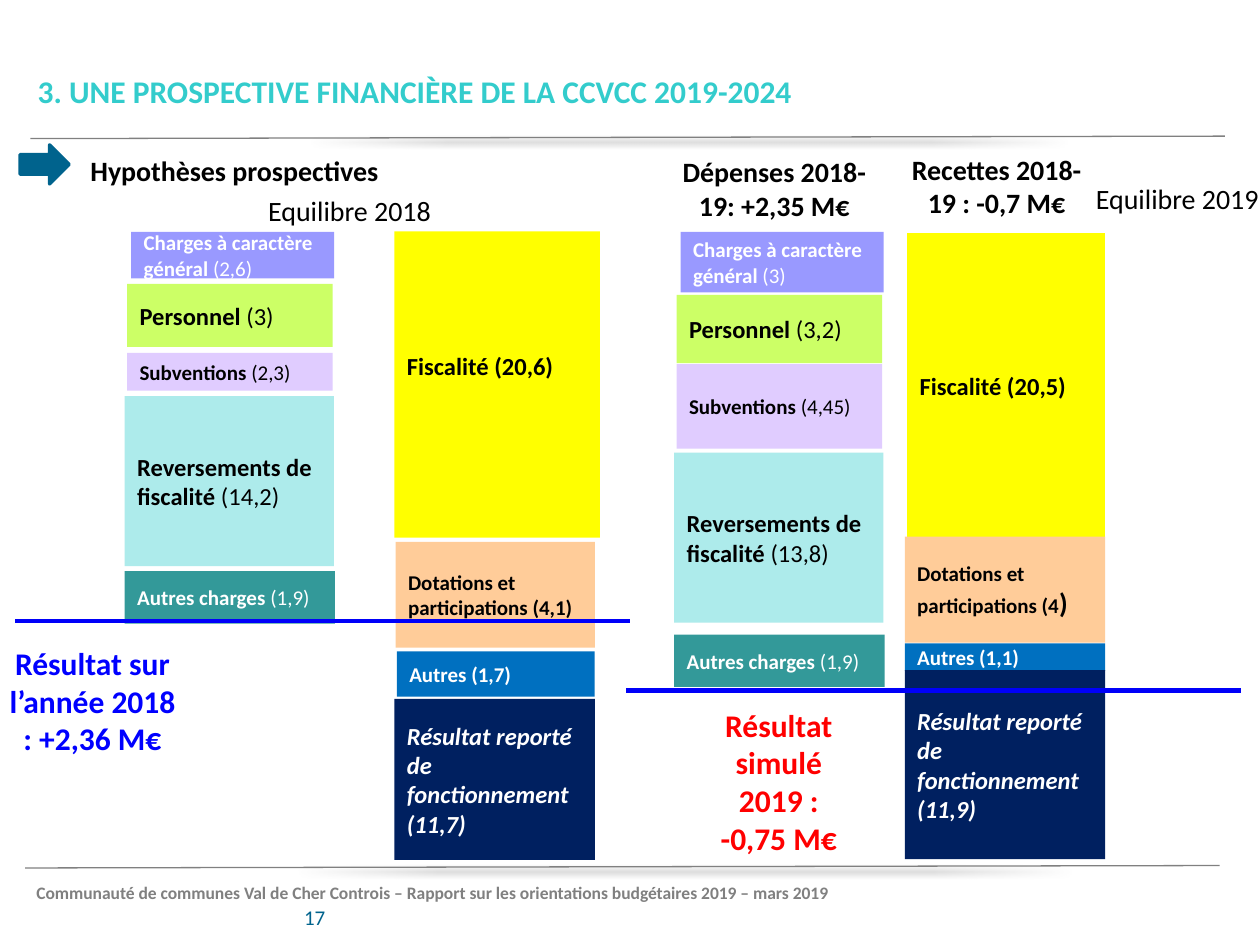
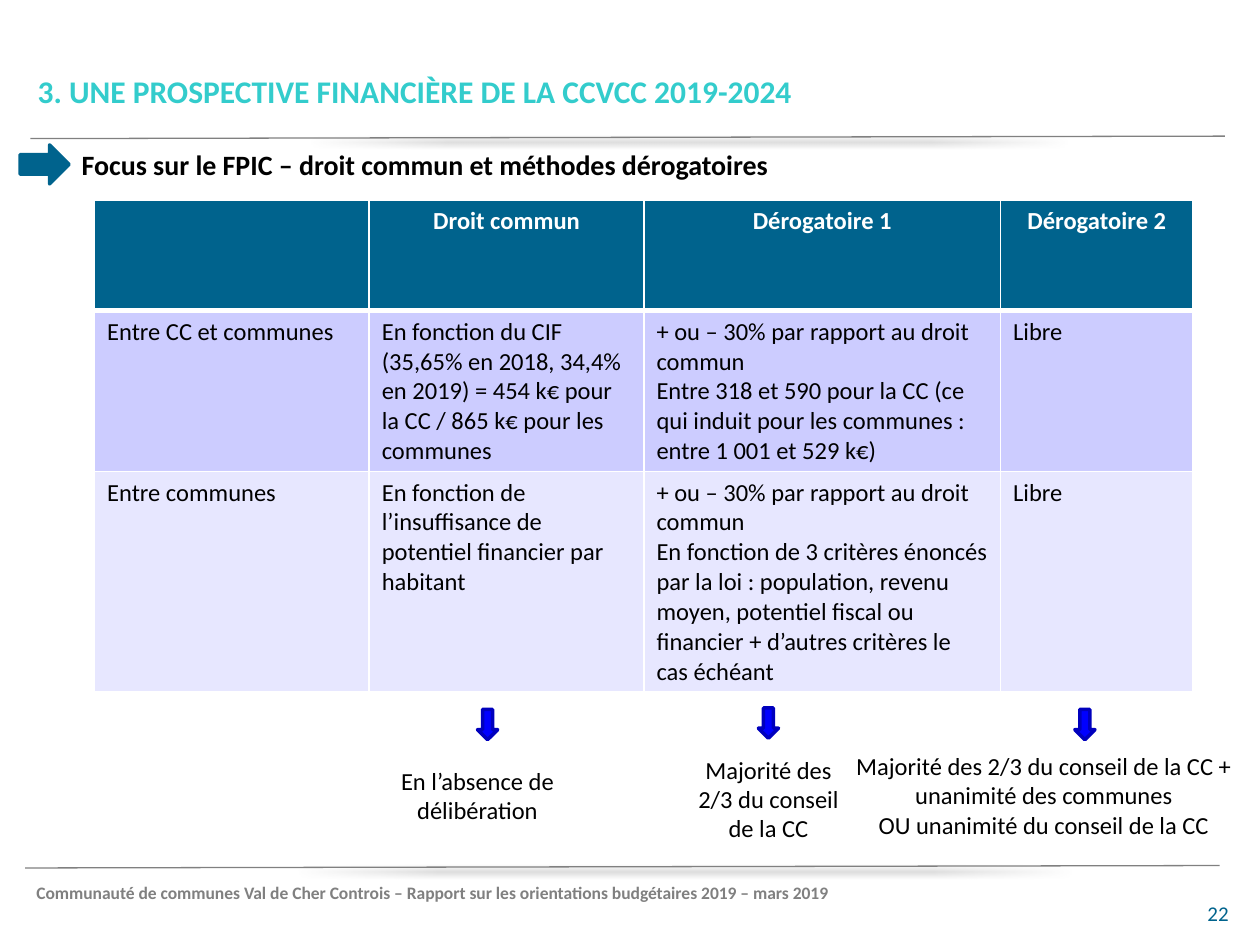
from dataclasses import dataclass

from lxml import etree
from pptx import Presentation
from pptx.dml import color
from pptx.enum import shapes, text
from pptx.oxml import ns
from pptx.util import Pt


@dataclass(frozen=True)
class Theme:
    font: str = "Calibri"
    black: str = "000000"
    white: str = "FFFFFF"
    grey: str = "808080"
    turquoise: str = "33CCCC"
    petrol: str = "00638D"
    blue: str = "0000FF"
    line_blue: str = "0000F9"
    dark_blue: str = "0000BD"
    red: str = "FF0000"
    lavender: str = "CCCCFF"
    pale_lavender: str = "E7E7FF"
    footer: int = 10
    small: int = 12
    body: int = 14
    heading: int = 16
    title: int = 18


THEME = Theme()
LEFT, CENTER, RIGHT = text.PP_ALIGN.LEFT, text.PP_ALIGN.CENTER, text.PP_ALIGN.RIGHT
MIDDLE = text.MSO_ANCHOR.MIDDLE


@dataclass(frozen=True)
class Area:
    left: float
    top: float
    width: float
    height: float

    def lengths(self):
        return Pt(self.left), Pt(self.top), Pt(self.width), Pt(self.height)


@dataclass(frozen=True)
class Style:
    size: int = THEME.body
    colour: str = THEME.black
    bold: bool = False
    italic: bool = False
    align: text.PP_ALIGN = LEFT


@dataclass(frozen=True)
class Category:
    label: str
    fill: str
    style: Style
    bold_value: bool = False


@dataclass(frozen=True)
class Block:
    category: Category
    value: str
    area: Area
    lift: float = 0
    ending: str = ""


@dataclass(frozen=True)
class Caption:
    content: str
    area: Area
    style: Style


@dataclass(frozen=True)
class Option:
    arrow_left: float
    arrow_top: float
    caption: str
    area: Area


HEADING = Style(THEME.heading, bold=True)
CENTRED_HEADING = Style(THEME.heading, bold=True, align=CENTER)
PLAIN_HEADING = Style(THEME.heading)
SMALL_BOLD = Style(THEME.small, bold=True)
SMALL_WHITE = Style(THEME.small, THEME.white, True)
BODY_BOLD = Style(bold=True)

GENERAL = Category("Charges à caractère général ", "9999FF", SMALL_WHITE)
STAFF = Category("Personnel ", "CCFF66", BODY_BOLD)
GRANTS = Category("Subventions ", "E0CCFF", SMALL_BOLD)
TRANSFERS = Category("Reversements de fiscalité ", "ADEBEB", BODY_BOLD)
OTHER_COSTS = Category("Autres charges ", "339999", SMALL_WHITE)
TAXES = Category("Fiscalité ", "FFFF00", BODY_BOLD, True)
ALLOCATIONS = Category("Dotations et participations ", "FFCC99", SMALL_BOLD, True)
OTHER_INCOME = Category("Autres ", "0070C0", SMALL_WHITE, True)
CARRIED = Category("Résultat reporté de fonctionnement ", "002060",
                   Style(colour=THEME.white, bold=True, italic=True), True)

EXPENSE_COLUMNS = {GENERAL: (75, 116), STAFF: (72.7, 117.4), GRANTS: (72.7, 117.4),
                   TRANSFERS: (71.3, 119.5), OTHER_COSTS: (71.3, 120.2)}
EXPENSE_YEARS = (
    (0, (("(2,6)", 132.5, 26.6), ("(3)", 162.3, 36), ("(2,3)", 201.6, 21.6),
         ("(14,2)", 226.3, 97.2), ("(1,9)", 326.4, 30))),
    (314, (("(3)", 132.5, 34.6), ("(3,2)", 168.5, 39), ("(4,45)", 208, 48.4),
           ("(13,8)", 258.6, 97.2), ("(1,9)", 362.6, 30))),
)
INCOME = (
    Block(TAXES, "(20,6)", Area(225.4, 132.3, 117.4, 175), lift=22),
    Block(ALLOCATIONS, "(4,1)", Area(226.1, 309.6, 113.8, 60.5)),
    Block(OTHER_INCOME, "(1,7)", Area(226.8, 372.2, 113, 25.9)),
    Block(CARRIED, "(11,7)", Area(225.4, 399.4, 114.5, 92)),
    Block(TAXES, "(20,5)", Area(518.4, 133.2, 113, 174.2)),
    Block(ALLOCATIONS, "(4", Area(517, 306.7, 114.5, 60.5), ending=")"),
    Block(OTHER_INCOME, "(1,1)", Area(517, 367.6, 114.5, 15.8)),
    Block(CARRIED, "(11,9)", Area(517, 383, 114.5, 108)),
)
CAPTIONS = (
    Caption("Equilibre 2018", Area(146.2, 107.3, 111, 26.6), PLAIN_HEADING),
    Caption("Equilibre 2019", Area(619.2, 100, 111, 26.6), PLAIN_HEADING),
    Caption("Dépenses 2018-19: +2,35 M€", Area(373.7, 85, 137.5, 46), CENTRED_HEADING),
    Caption("Recettes 2018-19 : -0,7 M€", Area(508.3, 83.5, 122.4, 46), CENTRED_HEADING),
    Caption("Résultat sur l’année 2018 : +2,36 M€", Area(-3.6, 364.3, 113, 72.7),
            Style(THEME.title, THEME.blue, True, align=CENTER)),
    Caption("Résultat simulé 2019 :\n-0,75 M€", Area(398.9, 399.6, 92.2, 94.3),
            Style(THEME.title, THEME.red, True, align=CENTER)),
)
TABLE_AREA = Area(54, 114.5, 627.8, 281)
TABLE_COLUMNS = (157, 157, 203.8, 110)
TABLE_HEIGHTS = (63, 92, 126)
TABLE_FILLS = (THEME.petrol, THEME.lavender, THEME.pale_lavender)
TABLE_ROWS = (
    ("", "Droit commun", "Dérogatoire 1", "Dérogatoire 2"),
    ("Entre CC et communes",
     "En fonction du CIF (35,65% en 2018, 34,4% en 2019) = 454 k€ pour la CC / 865 k€ pour les communes",
     "+ ou – 30% par rapport au droit commun\nEntre 318 et 590 pour la CC (ce qui induit pour les communes : entre 1 001 et 529 k€)",
     "Libre"),
    ("Entre communes",
     "En fonction de l’insuffisance de potentiel financier par habitant",
     "+ ou – 30% par rapport au droit commun\nEn fonction de 3 critères énoncés par la loi : population, revenu moyen, potentiel fiscal ou financier + d’autres critères le cas échéant",
     "Libre"),
)
OPTIONS = (
    Option(272.9, 405.4, "En l’absence de délibération", Area(218.9, 434.2, 108, 41)),
    Option(433.4, 404.6, "Majorité des 2/3 du conseil de la CC", Area(385.2, 427.7, 108, 58.3)),
    Option(614.2, 405.4,
           "Majorité des 2/3 du conseil de la CC + unanimité des communes\nOU unanimité du conseil de la CC",
           Area(461.5, 425.5, 270, 58.3)),
)


def rgb(value: str) -> color.RGBColor:
    return color.RGBColor.from_string(value)


def format_span(span, style: Style) -> None:
    font = span.font
    font.name, font.size = THEME.font, Pt(style.size)
    font.bold, font.italic = style.bold, style.italic
    font.color.rgb = rgb(style.colour)


def write(frame, content: str, style: Style) -> None:
    frame.text = content
    frame.word_wrap = True
    for para in frame.paragraphs:
        para.alignment = style.align
        for span in para.runs:
            format_span(span, style)


def add_text(page, content: str, area: Area, style: Style, anchor=text.MSO_ANCHOR.TOP) -> None:
    frame = page.shapes.add_textbox(*area.lengths()).text_frame
    write(frame, content, style)
    frame.vertical_anchor = anchor


def add_shape(page, kind, area: Area, fill: str, outline: str = ""):
    shape = page.shapes.add_shape(kind, *area.lengths())
    shape.shadow.inherit = False
    shape.fill.solid()
    shape.fill.fore_color.rgb = rgb(fill)
    if outline:
        shape.line.color.rgb = rgb(outline)
        shape.line.width = Pt(2)
    else:
        shape.line.fill.background()
    return shape


def add_line(page, start: tuple, end: tuple, colour: str, width: float, shadow: bool = False) -> None:
    line = page.shapes.add_connector(shapes.MSO_CONNECTOR.STRAIGHT, *map(Pt, start + end))
    line.line.color.rgb = rgb(colour)
    line.line.width = Pt(width)
    effects = etree.SubElement(line._element.spPr, ns.qn("a:effectLst"))
    if shadow:
        outer = etree.SubElement(effects, ns.qn("a:outerShdw"), blurRad=str(Pt(4)),
                                 dist=str(Pt(3)), dir="2700000", algn="tl", rotWithShape="0")
        tint = etree.SubElement(outer, ns.qn("a:srgbClr"), val=THEME.black)
        etree.SubElement(tint, ns.qn("a:alpha"), val="40000")


def add_block(page, block: Block) -> None:
    category = block.category
    box = add_shape(page, shapes.MSO_SHAPE.RECTANGLE, block.area, category.fill)
    frame = box.text_frame
    write(frame, category.label, category.style)
    frame.vertical_anchor = MIDDLE
    frame.margin_bottom = Pt(3.6 + block.lift)
    style = category.style
    tails = [(block.value, Style(style.size, style.colour, category.bold_value, style.italic))]
    if block.ending:
        tails.append((block.ending, HEADING))
    for content, tail_style in tails:
        span = frame.paragraphs[0].add_run()
        span.text = content
        format_span(span, tail_style)


def add_page(deck, heading: str, heading_area: Area, number: str, number_area: Area):
    page = deck.slides.add_slide(deck.slide_layouts[6])
    for left, top in ((17.3, 79.2), (14.4, 496)):
        add_line(page, (left, top), (left + 682.6, top - 1.4), THEME.grey, 0.75, shadow=True)
    add_text(page, "Communauté de communes Val de Cher Controis – Rapport sur les orientations budgétaires 2019 – mars 2019",
             Area(13.7, 500.4, 635, 19.4), Style(THEME.footer, THEME.grey, True))
    add_text(page, number, number_area, Style(THEME.small, THEME.petrol, align=RIGHT), MIDDLE)
    add_text(page, heading, heading_area, HEADING)
    add_shape(page, shapes.MSO_SHAPE.RIGHT_ARROW, Area(11.5, 82.8, 28, 22.3),
              THEME.petrol, THEME.petrol)
    add_text(page, "3. UNE PROSPECTIVE FINANCIÈRE DE LA CCVCC 2019-2024",
             Area(14.4, 37.4, 533, 45.4), Style(THEME.title, THEME.turquoise, True))
    return page


def set_borders(cell, bottom: float) -> None:
    properties = cell._tc.get_or_add_tcPr()
    for position, (side, width) in enumerate((("L", 1), ("R", 1), ("T", 1), ("B", bottom))):
        border = etree.Element(ns.qn(f"a:ln{side}"), w=str(Pt(width)))
        fill = etree.SubElement(border, ns.qn("a:solidFill"))
        etree.SubElement(fill, ns.qn("a:srgbClr"), val=THEME.white)
        properties.insert(position, border)


def add_rules_table(page) -> None:
    table = page.shapes.add_table(len(TABLE_ROWS), len(TABLE_COLUMNS), *TABLE_AREA.lengths()).table
    for column, width in zip(table.columns, TABLE_COLUMNS):
        column.width = Pt(width)
    for index, (row, height, fill) in enumerate(zip(table.rows, TABLE_HEIGHTS, TABLE_FILLS)):
        row.height = Pt(height)
        header = index == 0
        style = Style(colour=THEME.white, bold=True, align=CENTER) if header else Style()
        for cell, content in zip(row.cells, TABLE_ROWS[index]):
            write(cell.text_frame, content, style)
            cell.fill.solid()
            cell.fill.fore_color.rgb = rgb(fill)
            set_borders(cell, 3 if header else 1)


def build_balance_page(deck) -> None:
    page = add_page(deck, "Hypothèses prospectives", Area(44.6, 84, 300, 28),
                    "17", Area(25.2, 509.8, 167.8, 28.8))
    for shift, amounts in EXPENSE_YEARS:
        for (category, (left, width)), (value, top, height) in zip(EXPENSE_COLUMNS.items(), amounts):
            add_block(page, Block(category, value, Area(left + shift, top, width, height)))
    for block in INCOME:
        add_block(page, block)
    for left, top in ((8.6, 355), (357.8, 394.6)):
        add_line(page, (left, top), (left + 351.4, top), THEME.line_blue, 2.5)
    for caption in CAPTIONS:
        add_text(page, caption.content, caption.area, caption.style)


def build_options_page(deck) -> None:
    page = add_page(deck, "Focus sur le FPIC – droit commun et méthodes dérogatoires",
                    Area(39.6, 81, 652, 28), "22", Area(541.4, 507.6, 167.8, 28.8))
    add_rules_table(page)
    for option in OPTIONS:
        add_shape(page, shapes.MSO_SHAPE.DOWN_ARROW,
                  Area(option.arrow_left, option.arrow_top, 11.5, 17.3), THEME.blue, THEME.dark_blue)
        add_text(page, option.caption, option.area, Style(align=CENTER))


def main() -> None:
    deck = Presentation()
    deck.slide_width, deck.slide_height = Pt(720), Pt(540)
    build_balance_page(deck)
    build_options_page(deck)
    deck.save("out.pptx")


if __name__ == "__main__":
    main()
